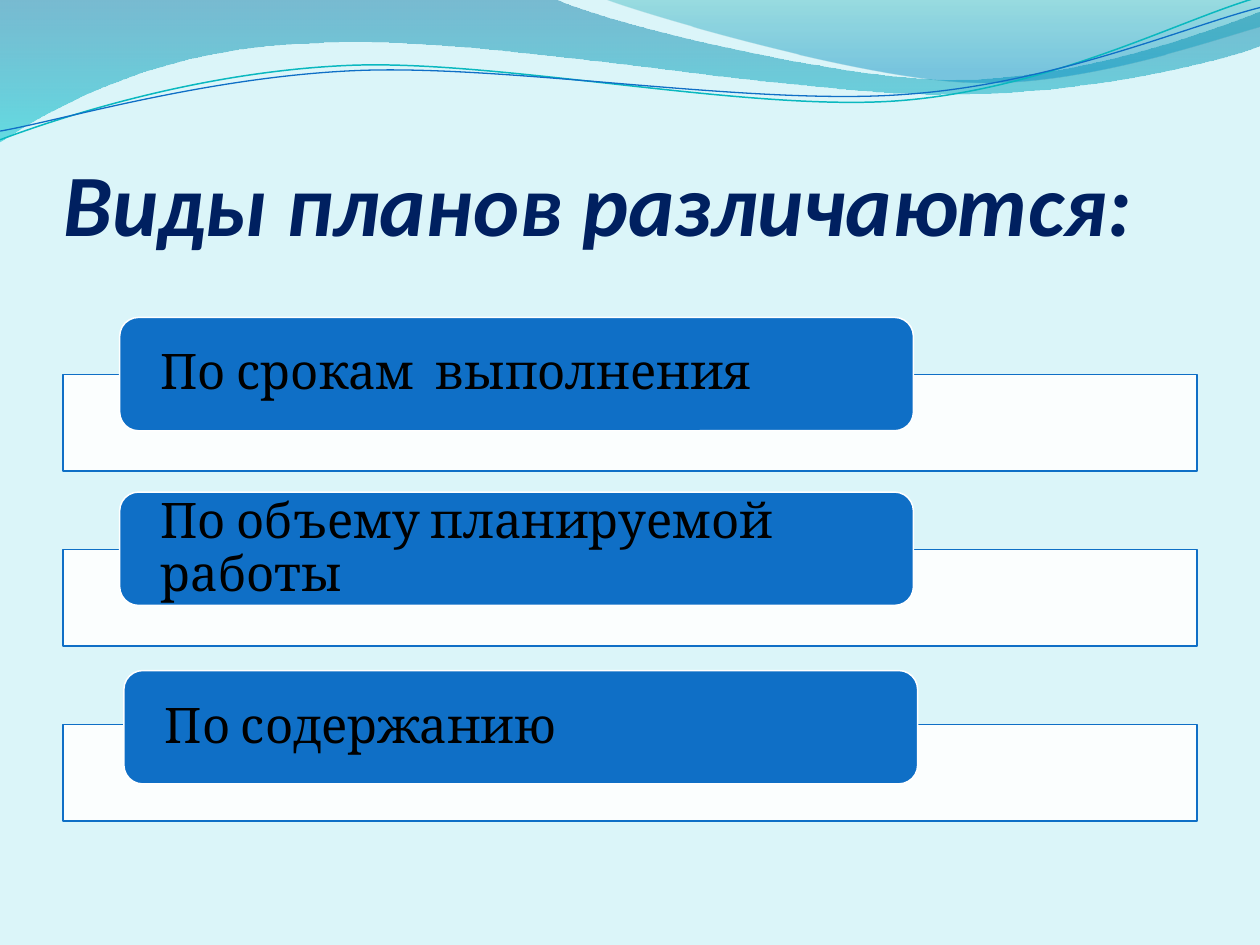
from lxml.etree import SubElement
from pptx import Presentation
from pptx.dml.color import RGBColor
from pptx.enum.shapes import MSO_SHAPE as SHAPE
from pptx.enum.text import MSO_ANCHOR as ANCHOR, MSO_AUTO_SIZE as AUTO, PP_ALIGN as ALIGN
from pptx.oxml.ns import qn
from pptx.util import Pt

COLORS = {
    "background": "DBF5F9", "title": "002060", "text": "000000",
    "blue": "0F6FC6", "white": "FFFFFF", "teal": "0AB8BF",
    "band_top": "0074A1", "band_bottom": "00C6CF",
    "crest_top": "00A1A9", "crest_bottom": "008BBF",
}

# Outlines in points: a pair is a straight segment, six numbers are a curve
BAND = [(0, 0), (316.8, -0.7),
        (342.7, 12.2, 478.1, 45.4, 545.8, 45.4),
        (614.2, 45.4, 689.8, 18.7, 720, 6.5), (720.7, 25.9),
        (707.8, 31.7, 626.4, 54.7, 537.1, 54),
        (447.8, 54, 275, 20.2, 185, 24.5),
        (92.9, 25.9, 33.1, 59.8, -0.7, 81.4)]
CREST = [(344.9, -0.7),
         (366.5, 7.9, 491, 44.6, 553.7, 46.8),
         (616.3, 49.7, 691.9, 23, 720, 15.1), (720, 0)]
TEAL_WAVE = [(0, 79.9),
             (34.6, 67, 113.8, 41, 199.4, 37.4),
             (284.4, 33.8, 427, 64.1, 513.4, 57.6),
             (599.8, 51.1, 675.4, 10.8, 718.6, -1.4)]
BLUE_WAVE = [(0, 74.9),
             (33.8, 69.1, 118.1, 43.9, 203.8, 40.3),
             (290.2, 36.7, 429.8, 60.5, 516.2, 54),
             (601.9, 48.2, 677.5, 15.1, 720, 4.3)]

# Label text with the left and top of its box
PLAN_TYPES = [("По срокам  выполнения", 68.4, 181.4),
              ("По объему планируемой работы", 68.4, 281.2),
              ("По содержанию", 70.8, 383.2)]
FIRST_BAR_TOP, BAR_PITCH = 213.9, 100


def rgb(name):
    return RGBColor.from_string(COLORS[name])


def set_alpha(color_xml, percent):
    SubElement(color_xml, qn("a:alpha")).set("val", str(percent * 1000))


def set_line(shape, color, width):
    shape.line.color.rgb = rgb(color)
    shape.line.width = Pt(width)


def style_text(shape, text, font_format, frame_format):
    frame = shape.text_frame
    frame.text = text
    for name, value in frame_format.items():
        setattr(frame, name, value)
    paragraph = frame.paragraphs[0]
    paragraph.alignment = ALIGN.LEFT
    font = paragraph.runs[0].font
    font.color.rgb = rgb(font_format["color"])
    for name, value in font_format.items():
        if name != "color":
            setattr(font, name, value)
    return paragraph


def add_curve(slide, outline, closed):
    start, *segments = outline
    builder = slide.shapes.build_freeform(Pt(start[0]), Pt(start[1]))
    for segment in segments:
        points = zip(segment[::2], segment[1::2])
        builder.add_line_segments([(Pt(x), Pt(y)) for x, y in points], close=False)
    if closed:
        builder.add_line_segments([], close=True)
    curve = builder.convert_to_shape()
    curve.shadow.inherit = False

    # Gather the three points of each curved segment into one Bezier
    steps = iter(list(curve._element.iter(qn("a:lnTo"))))
    for segment in segments:
        step = next(steps)
        if len(segment) == 6:
            step.tag = qn("a:cubicBezTo")
            for _ in range(2):
                extra = next(steps)
                step.append(extra[0])
                extra.getparent().remove(extra)
    return curve


def add_gradient_wave(slide, outline, stops):
    wave = add_curve(slide, outline, closed=True)
    wave.line.fill.background()
    wave.fill.gradient()
    wave.fill.gradient_angle = 270
    for stop, (position, color, _) in zip(wave.fill.gradient_stops, stops):
        stop.position = position
        stop.color.rgb = rgb(color)
    tints = wave._element.spPr.iter(qn("a:srgbClr"))
    for tint, (_, _, opacity) in zip(list(tints), stops):
        set_alpha(tint, opacity)


def add_wave_line(slide, outline, color, width):
    wave = add_curve(slide, outline, closed=False)
    wave.fill.background()
    set_line(wave, color, width)


def add_box(slide, kind, left, top, width, height, fill, line):
    box = slide.shapes.add_shape(kind, Pt(left), Pt(top), Pt(width), Pt(height))
    box.shadow.inherit = False
    box.fill.solid()
    box.fill.fore_color.rgb = rgb(fill)
    set_line(box, line, 0.85)
    return box


def add_plan_type(slide, bar_top, text, left, top):
    bar = add_box(slide, SHAPE.RECTANGLE, 36, bar_top, 648, 55.4, "white", "blue")
    set_alpha(next(bar._element.spPr.iter(qn("a:srgbClr"))), 90)
    label = add_box(slide, SHAPE.ROUNDED_RECTANGLE, left, top, 453.6, 64.8,
                    "blue", "white")
    paragraph = style_text(
        label, text,
        {"name": "Cambria", "size": Pt(28), "color": "text"},
        {"word_wrap": True, "vertical_anchor": ANCHOR.MIDDLE,
         "margin_left": Pt(20.2), "margin_right": Pt(20.2),
         "margin_top": 0, "margin_bottom": 0})
    paragraph.line_spacing = 0.9


def format_title(slide, text):
    title = slide.shapes.title
    place = {"left": 36, "top": 55.4, "width": 648, "height": 90}
    for name, value in place.items():
        setattr(title, name, Pt(value))
    style_text(
        title, text,
        {"name": "Calibri", "size": Pt(50), "bold": True, "italic": True,
         "color": "title"},
        {"word_wrap": True, "auto_size": AUTO.NONE,
         "vertical_anchor": ANCHOR.BOTTOM, "margin_left": 0,
         "margin_right": 0, "margin_top": Pt(3.6), "margin_bottom": 0})


def main():
    deck = Presentation()
    deck.slide_width, deck.slide_height = Pt(720), Pt(540)
    slide = deck.slides.add_slide(deck.slide_layouts[5])
    slide.background.fill.solid()
    slide.background.fill.fore_color.rgb = rgb("background")

    # Waves along the top edge
    add_gradient_wave(slide, BAND, [(0, "band_top", 45), (1, "band_bottom", 55)])
    add_gradient_wave(slide, CREST, [(0, "crest_top", 30), (0.8, "crest_bottom", 45)])
    add_wave_line(slide, TEAL_WAVE, "teal", 0.85)
    add_wave_line(slide, BLUE_WAVE, "blue", 0.75)

    format_title(slide, "Виды планов различаются:")

    # List of plan types
    for row, (text, left, top) in enumerate(PLAN_TYPES):
        add_plan_type(slide, FIRST_BAR_TOP + row * BAR_PITCH, text, left, top)

    deck.save("out.pptx")


if __name__ == "__main__":
    main()
